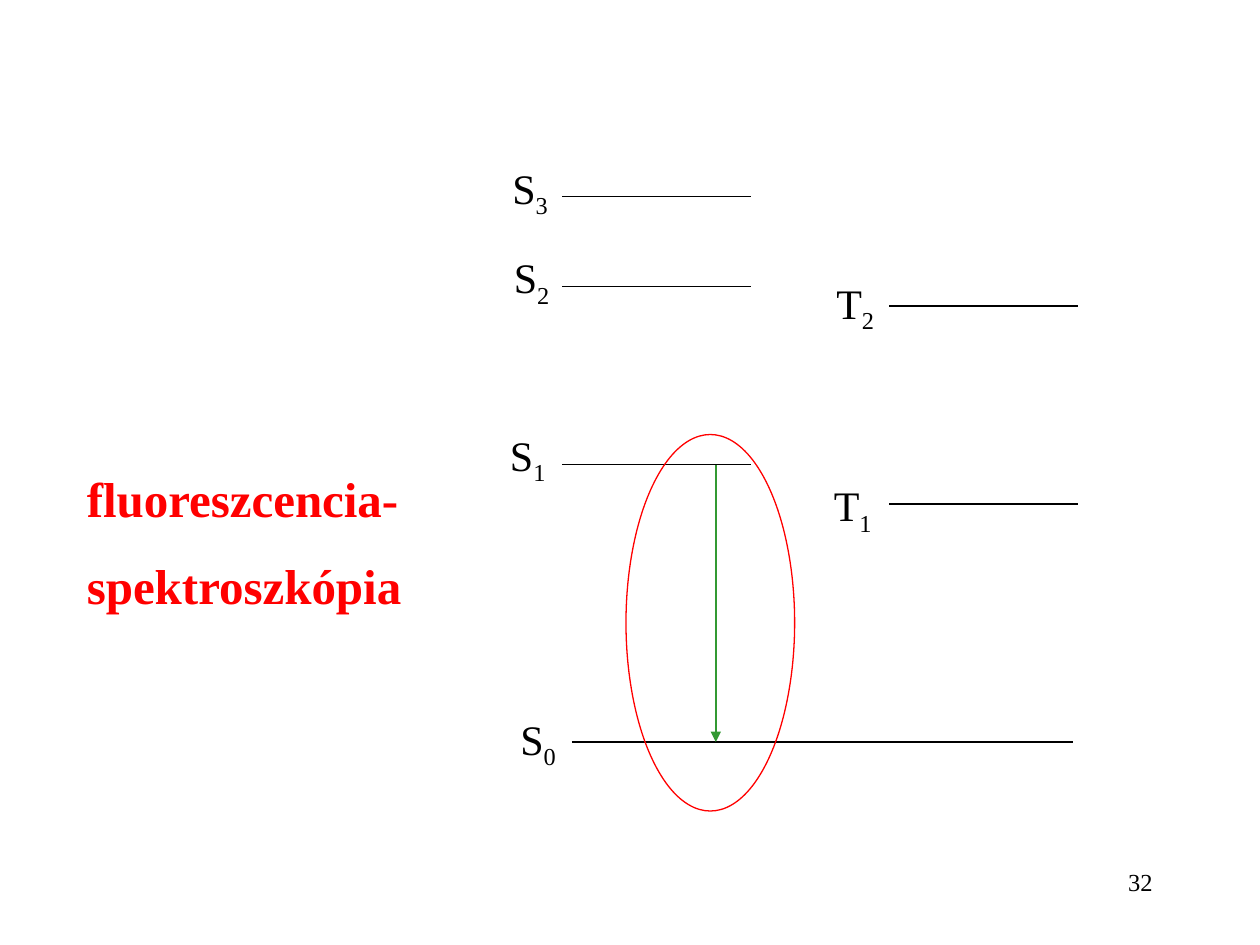
from dataclasses import dataclass

from lxml.etree import SubElement
from pptx import Presentation
from pptx.dml.color import RGBColor
from pptx.enum.shapes import MSO_CONNECTOR, MSO_SHAPE
from pptx.enum.text import MSO_AUTO_SIZE, PP_ALIGN
from pptx.oxml.ns import qn
from pptx.util import Cm, Pt


@dataclass(frozen=True)
class Theme:
    font: str = "Times New Roman"
    ink: RGBColor = RGBColor(0, 0, 0)
    red: RGBColor = RGBColor(0xFF, 0, 0)
    green: RGBColor = RGBColor(0x33, 0x99, 0x33)
    head: Pt = Pt(28)
    label: Pt = Pt(24)
    small: Pt = Pt(14)
    gap: Pt = Pt(16)
    thin: Pt = Pt(0.75)
    thick: Pt = Pt(1.5)


THEME = Theme()
GROUND, EXCITED = 14.96, 9.37
SINGLET, TRIPLET = (11.33, 15.14), (17.93, 21.74)

# letter, index, (line start, line end), line height, label left, label top
LEVELS = [
    ("S", "0", (11.53, 21.64), GROUND, 10.24, 14.25),
    ("S", "1", SINGLET, EXCITED, 10.03, 8.53),
    ("S", "2", SINGLET, 5.77, 10.11, 4.95),
    ("S", "3", SINGLET, 3.96, 10.08, 3.15),
    ("T", "1", TRIPLET, 10.16, 16.56, 9.55),
    ("T", "2", TRIPLET, 6.17, 16.61, 5.46),
]


def put(item, **values):
    for name, value in values.items():
        setattr(item, name, value)


def add_run(para, text, size, color=THEME.ink, bold=False):
    run = para.add_run()
    run.text = text
    put(run.font, name=THEME.font, size=size, bold=bold)
    run.font.color.rgb = color
    return run


def add_box(slide, left, top, width, height, fit=MSO_AUTO_SIZE.SHAPE_TO_FIT_TEXT):
    box = slide.shapes.add_textbox(Cm(left), Cm(top), Cm(width), Cm(height))
    put(box.text_frame, word_wrap=True, auto_size=fit)
    return box.text_frame


def add_line(slide, start, end, color=THEME.ink, width=THEME.thin):
    line = slide.shapes.add_connector(
        MSO_CONNECTOR.STRAIGHT, *map(Cm, start), *map(Cm, end))
    line.line.color.rgb = color
    line.line.width = width
    SubElement(line._element.spPr, qn("a:effectLst"))
    return line


def add_arrow(slide, start, end):
    arrow = add_line(slide, start, end, THEME.green, THEME.thick)
    SubElement(arrow.line._get_or_add_ln(), qn("a:tailEnd"), type="triangle")


def add_level(slide, letter, index, span, y, left, top):
    """Draw one energy level with its subscripted label."""
    add_line(slide, (span[0], y), (span[1], y))
    para = add_box(slide, left, top, 1.4, 1.27).paragraphs[0]
    para.space_before = THEME.gap
    add_run(para, letter, THEME.label)
    sub = add_run(para, index, THEME.label)
    sub.font._element.set("baseline", "-25000")


def add_ring(slide, left, top, width, height):
    ring = slide.shapes.add_shape(
        MSO_SHAPE.OVAL, Cm(left), Cm(top), Cm(width), Cm(height))
    ring.shadow.inherit = False
    ring.fill.background()
    ring.line.color.rgb = THEME.red
    ring.line.width = THEME.thin


def add_name(slide, lines):
    frame = add_box(slide, 1.5, 9.32, 8.41, 3.23)
    for i, text in enumerate(lines):
        para = frame.add_paragraph() if i else frame.paragraphs[0]
        para.space_before = THEME.gap
        add_run(para, text, THEME.head, THEME.red, True)


def add_number(slide, text):
    frame = add_box(slide, 18.21, 17.35, 5.28, 1.27, MSO_AUTO_SIZE.NONE)
    para = frame.paragraphs[0]
    para.alignment = PP_ALIGN.RIGHT
    add_run(para, text, THEME.small)


def main():
    deck = Presentation()
    put(deck, slide_width=Cm(25.4), slide_height=Cm(19.05))
    slide = deck.slides.add_slide(deck.slide_layouts[6])
    add_number(slide, "32")
    for level in LEVELS:
        add_level(slide, *level)
    add_arrow(slide, (14.43, EXCITED), (14.43, GROUND))
    add_ring(slide, 12.62, 8.76, 3.4, 7.59)
    add_name(slide, ["fluoreszcencia-", "spektroszkópia"])
    deck.save("out.pptx")


if __name__ == "__main__":
    main()
